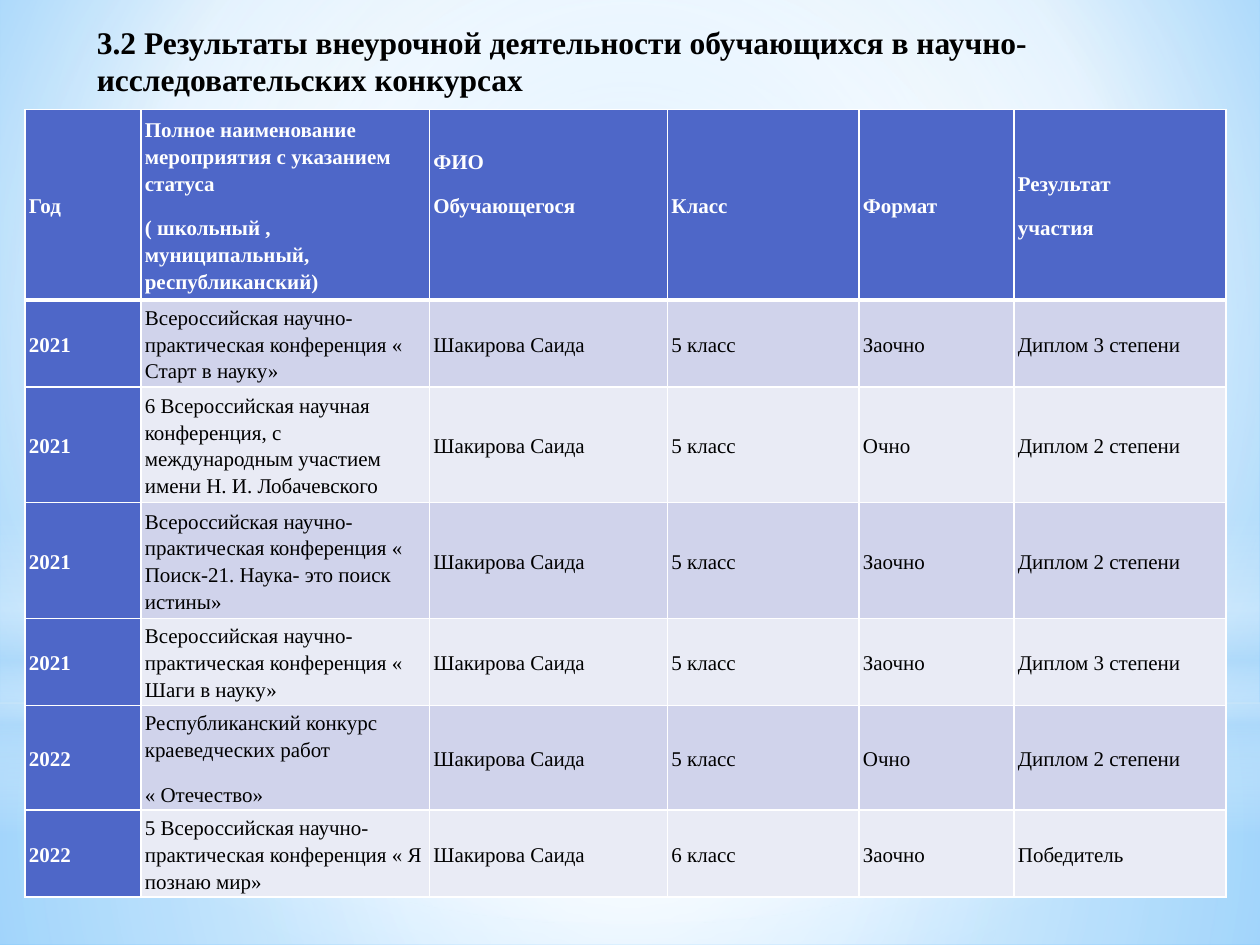
"""Builds the slide with a table of pupils' results in research contests."""
from lxml.etree import SubElement as Sub
from pptx import Presentation as Deck
from pptx.dml.color import RGBColor
from pptx.enum.shapes import MSO_SHAPE as Form
from pptx.enum.text import MSO_ANCHOR as Anchor
from pptx.oxml.ns import qn
from pptx.util import Inches, Pt

BLUE, WHITE, BLACK, PALE = "4E67C8", "FFFFFF", "000000", "B4DCFA"
BANDS = ("D0D3EB", "E9EBF5")
MID = (50, 50, 50, 50)
NAME = "Шакирова Саида"
COLS = (0.92, 2.29, 1.89, 1.52, 1.23, 1.68)
ROWS = (1.51, 0.69, 0.92, 0.92, 0.69, 0.83, 0.69)
HEAD = ("Год",
        "Полное наименование мероприятия с указанием статуса\n"
        "( школьный , муниципальный, республиканский)",
        "ФИО\nОбучающегося", "Класс", "Формат", "Результат\nучастия")
EVENTS = (
    ("2021", "Всероссийская научно- практическая конференция « Старт в науку»",
     "5 класс", "Заочно", "Диплом 3 степени"),
    ("2021", "6 Всероссийская научная конференция, с международным участием "
     "имени Н. И. Лобачевского", "5 класс", "Очно", "Диплом 2 степени"),
    ("2021", "Всероссийская научно- практическая конференция « Поиск-21. "
     "Наука- это поиск истины»", "5 класс", "Заочно", "Диплом 2 степени"),
    ("2021", "Всероссийская научно- практическая конференция « Шаги в науку»",
     "5 класс", "Заочно", "Диплом 3 степени"),
    ("2022", "Республиканский конкурс краеведческих работ\n« Отечество»",
     "5 класс", "Очно", "Диплом 2 степени"),
    ("2022", "5 Всероссийская научно- практическая конференция « Я познаю мир»",
     "6 класс", "Заочно", "Победитель"),
)
GLOWS = (
    (Form.RECTANGLE, (0, 5.58, 10, 1.92),
     ((0, WHITE, 91), (37, WHITE, 76), (100, PALE, 79)), MID),
    (Form.RECTANGLE, (0, 0, 10, 5.58),
     ((0, WHITE, 89), (48, WHITE, 62), (100, PALE, 79)), MID),
    (Form.RECTANGLE, (0, 4.12, 10, 2.5),
     ((0, WHITE, 0), (29, WHITE, 30), (45, PALE, 40), (55, WHITE, 26),
      (65, PALE, 60), (100, WHITE, 0)), None),
    (Form.OVAL, (0, 1.75, 10, 5.58), ((0, WHITE, 100), (56, WHITE, 0)), MID),
)


def tint(code):
    return RGBColor.from_string(code)


def assign(item, values):
    for key, value in values.items():
        setattr(item, key, value)


class Page:
    def __init__(self, deck):
        self.slide = deck.slides.add_slide(deck.slide_layouts[6])
        self.font = {"name": "Times New Roman", "size": Pt(12)}
        self.para = {"line_spacing": 1.15, "space_after": Pt(10)}
        self.cell = {"vertical_anchor": Anchor.MIDDLE,
                     "margin_left": Inches(0.03), "margin_right": Inches(0.03),
                     "margin_top": 0, "margin_bottom": 0}

    def blend(self, fill, root, stops, focus=None):
        fill.solid()
        flat = root.find(".//" + qn("a:solidFill"))
        grad = flat.makeelement(qn("a:gradFill"), {"rotWithShape": "1"})
        flat.getparent().replace(flat, grad)
        marks = Sub(grad, qn("a:gsLst"))
        for place, code, alpha in stops:
            mark = Sub(marks, qn("a:gs"), pos=str(place * 1000))
            shade = Sub(mark, qn("a:srgbClr"), val=str(tint(code)))
            if alpha < 100:
                Sub(shade, qn("a:alpha"), val=str(alpha * 1000))
        if focus:
            way = Sub(grad, qn("a:path"), path="circle")
            sides = {side: str(part * 1000) for side, part in zip("ltrb", focus)}
            Sub(way, qn("a:fillToRect"), sides)
        else:
            Sub(grad, qn("a:lin"), ang=str(90 * 60000), scaled="0")

    def ground(self, stops, focus):
        self.blend(self.slide.background.fill, self.slide.element, stops, focus)

    def glow(self, form, box, stops, focus):
        shape = self.slide.shapes.add_shape(form, *map(Inches, box))
        shape.shadow.inherit = False
        shape.line.fill.background()
        self.blend(shape.fill, shape.element.spPr, stops, focus)

    def label(self, frame, text, code, para, **font):
        frame.text = text
        for item in frame.paragraphs:
            assign(item, para)
            for run in item.runs:
                assign(run.font, {**self.font, **font})
                run.font.color.rgb = tint(code)

    def title(self, text, box):
        frame = self.slide.shapes.add_textbox(*map(Inches, box)).text_frame
        frame.word_wrap = True
        self.label(frame, text, BLACK, {}, size=Pt(18), bold=True)

    def edge(self, cell, widths):
        for side, width in zip("LRTB", widths):
            line = Sub(cell.get_or_add_tcPr(), qn("a:ln" + side), w=str(Pt(width)))
            paint = Sub(line, qn("a:solidFill"))
            Sub(paint, qn("a:srgbClr"), val=str(tint(WHITE)))

    def table(self, rows, left, top):
        box = map(Inches, (left, top, sum(COLS), sum(ROWS)))
        grid = self.slide.shapes.add_table(len(ROWS), len(COLS), *box).table
        for col, width in zip(grid.columns, COLS):
            col.width = Inches(width)
        for row, height in zip(grid.rows, ROWS):
            row.height = Inches(height)
        for i, row in enumerate(rows):
            for j, text in enumerate(row):
                cell = grid.cell(i, j)
                lead = i == 0 or j == 0
                assign(cell, self.cell)
                self.edge(cell._tc, (1, 1, 3 if i == 1 else 1, 3 if i == 0 else 1))
                cell.fill.solid()
                cell.fill.fore_color.rgb = tint(BLUE if lead else BANDS[(i - 1) % 2])
                self.label(cell.text_frame, text, WHITE if lead else BLACK,
                           self.para, bold=lead)
        grid.cell(0, 2).margin_bottom = Inches(0.35)


def main():
    deck = Deck()
    deck.slide_width, deck.slide_height = Inches(10), Inches(7.5)
    page = Page(deck)
    page.ground(((0, "9ED5FF", 100), (60, WHITE, 100), (100, "5BB9FF", 100)),
                (20, 10, 20, 60))
    for glow in GLOWS:
        page.glow(*glow)
    rows = [HEAD] + [(year, event, NAME, *rest) for year, event, *rest in EVENTS]
    page.table(rows, 0.2, 0.87)
    page.title("3.2 Результаты внеурочной деятельности обучающихся в научно- "
               "исследовательских конкурсах", (0.67, 0.13, 8.82, 0.71))
    deck.save("out.pptx")


if __name__ == "__main__":
    main()
